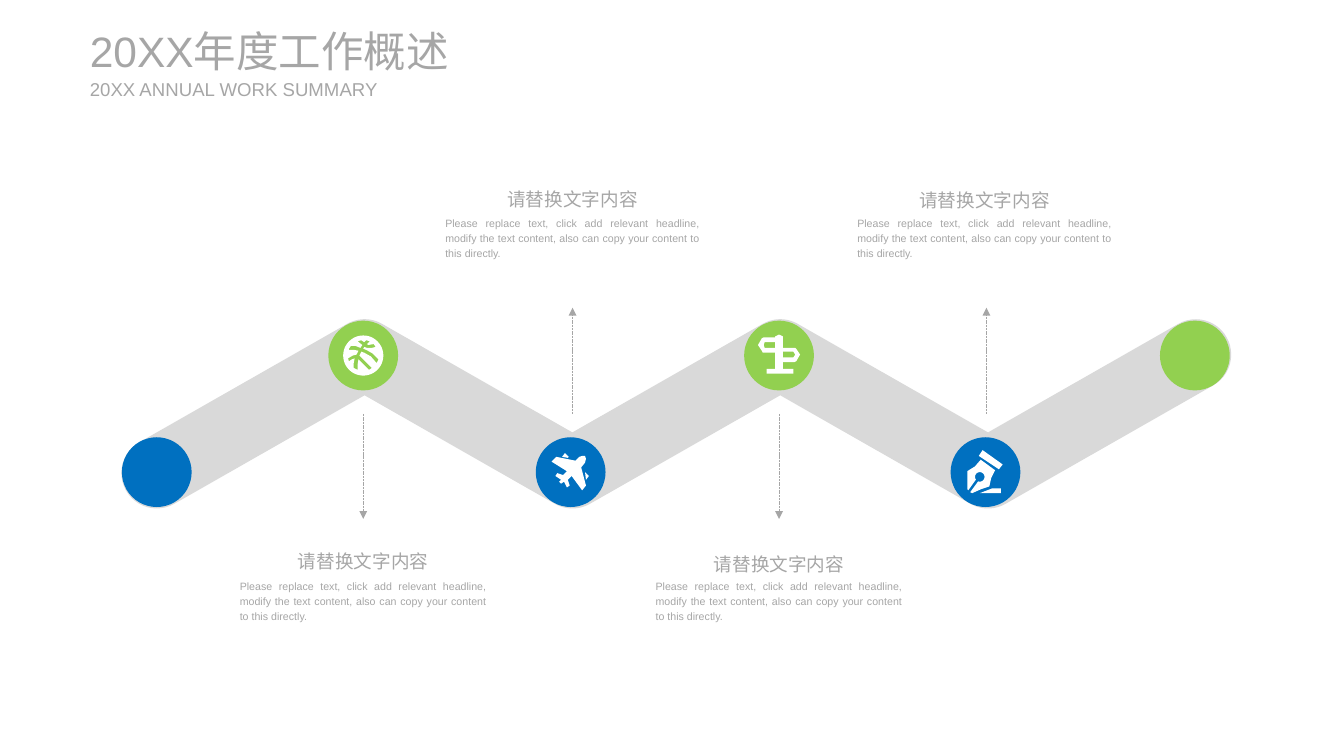
import math
from dataclasses import dataclass

from lxml import etree
from pptx import Presentation
from pptx import util as u
from pptx.dml.color import RGBColor
from pptx.enum import dml, shapes, text
from pptx.oxml.ns import qn


@dataclass(frozen=True)
class Theme:
    font: str = "Arial"
    grey: str = "A6A6A6"
    band: str = "D9D9D9"
    blue: str = "0070C0"
    green: str = "92D050"
    white: str = "FFFFFF"
    title: int = 32
    heading: int = 14
    body: int = 8


THEME = Theme()
TITLE = "20XX年度工作概述"
SUBTITLE = "20XX ANNUAL WORK SUMMARY"
HEADING = "请替换文字内容"
BODY = ("Please replace text, click add relevant headline, modify the text content, "
        "also can copy your content to this directly.")

CAPTIONS = [
    {"center": 3.8, "arrow": 3.8, "tip": 5.43, "heading": 5.66, "body": 5.99, "width": 2.78},
    {"center": 5.99, "arrow": 5.99, "tip": 3.22, "heading": 1.87, "body": 2.19, "width": 2.86},
    {"center": 8.15, "arrow": 8.15, "tip": 5.43, "heading": 5.69, "body": 5.99, "width": 2.78},
    {"center": 10.3, "arrow": 10.32, "tip": 3.22, "heading": 1.88, "body": 2.19, "width": 2.86},
]
ARROW_START = 4.33
HEADING_SIZE = (1.58, 0.36)
BODY_HEIGHT = 0.57

NODE_X = [1.64, 3.8, 5.97, 8.15, 10.31, 12.5]
NODE_Y = {"low": 4.94, "high": 3.72}
NODE_SIZE = 0.73
BAND_LEFT, BAND_RIGHT = 1.64, 12.51
BAND_LOW, BAND_HIGH = 4.95, 3.71
BAND_RADIUS = 0.37


def arc(x, y, radius, start, end, steps=24):
    angles = [math.radians(start + (end - start) * i / steps) for i in range(steps + 1)]
    return [(x + radius * math.cos(a), y + radius * math.sin(a)) for a in angles]


BALL = [
    arc(3.8, 3.72, 0.21, 0, 360, 48),
    [(3.67, 3.62), (3.65, 3.65), (3.65, 3.66), (3.7, 3.66), (3.75, 3.67), (3.73, 3.71),
     (3.69, 3.72), (3.64, 3.75), (3.65, 3.78), (3.68, 3.76), (3.71, 3.75), (3.7, 3.8),
     (3.7, 3.85), (3.74, 3.87), (3.74, 3.82), (3.75, 3.76), (3.8, 3.81), (3.86, 3.87),
     (3.89, 3.85), (3.83, 3.79), (3.76, 3.72), (3.78, 3.68), (3.81, 3.69), (3.88, 3.73),
     (3.94, 3.8), (3.96, 3.76), (3.9, 3.7), (3.83, 3.66), (3.8, 3.65), (3.81, 3.63),
     (3.84, 3.64), (3.89, 3.64), (3.93, 3.63), (3.91, 3.6), (3.85, 3.61), (3.84, 3.6),
     (3.87, 3.57), (3.83, 3.56), (3.81, 3.58), (3.78, 3.56), (3.74, 3.57), (3.79, 3.61),
     (3.77, 3.64), (3.72, 3.62)],
]
PLANE = [
    [(6.12, 4.77), (6.13, 4.8), (6.12, 4.84), (6.08, 4.89), (6.13, 5.08), (6.09, 5.13),
     (5.98, 4.98), (5.94, 5.02), (5.96, 5.08), (5.93, 5.1), (5.9, 5.04), (5.87, 5.06),
     (5.85, 5.04), (5.87, 5.02), (5.81, 4.98), (5.83, 4.95), (5.89, 4.97), (5.93, 4.93),
     (5.77, 4.83), (5.82, 4.78), (6.02, 4.82), (6.06, 4.78), (6.09, 4.77)],
    [(6.16, 4.98), (6.12, 4.94), (6.13, 5.02)],
    [(5.91, 4.74), (5.88, 4.78), (5.94, 4.79), (5.95, 4.78)],
]
SIGNPOST = [
    [(8.11, 3.58), (8, 3.58), (7.99, 3.61), (8, 3.64), (8.11, 3.64)],
    [(8.19, 3.64), (8.32, 3.64), (8.33, 3.65), (8.37, 3.71), (8.33, 3.78), (8.31, 3.79),
     (8.19, 3.79), (8.19, 3.86), (8.3, 3.86), (8.3, 3.91), (8.02, 3.91), (8.02, 3.86),
     (8.11, 3.86), (8.11, 3.69), (7.98, 3.69), (7.97, 3.67), (7.93, 3.61), (7.97, 3.54),
     (7.99, 3.53), (8.11, 3.53), (8.11, 3.52), (8.15, 3.5), (8.19, 3.52)],
    [(8.3, 3.68), (8.19, 3.68), (8.19, 3.74), (8.3, 3.74), (8.32, 3.71)],
]
PEN = [
    [(10.13, 5.13), (10.12, 5.12), (10.12, 4.93), (10.2, 4.88), (10.26, 4.81), (10.41, 4.92),
     (10.37, 5), (10.35, 5.09), (10.26, 5.12), (10.17, 5.16), (10.15, 5.15)]
    + arc(10.25, 4.99, 0.05, 110, -215),
    [(10.25, 5.16), (10.47, 5.16), (10.47, 5.11), (10.38, 5.11)],
    [(10.45, 4.91), (10.49, 4.86), (10.28, 4.71), (10.24, 4.77)],
]


def color(value):
    return RGBColor.from_string(value)


def paint(shape, value):
    shape.shadow.inherit = False
    shape.fill.solid()
    shape.fill.fore_color.rgb = color(value)
    shape.line.fill.background()


def draw_outline(page, contours, value):
    contours = [[(u.Inches(x), u.Inches(y)) for x, y in points] for points in contours]
    builder = page.shapes.build_freeform(*contours[0][0], scale=1.0)
    for number, points in enumerate(contours):
        if number:
            builder.move_to(*points[0])
        builder.add_line_segments(points[1:], close=True)
    paint(builder.convert_to_shape(), value)


def band_outline():
    count = len(NODE_X)
    pitch = (BAND_RIGHT - BAND_LEFT) / (count - 1)
    joints = [(BAND_LEFT + i * pitch, BAND_HIGH if i % 2 else BAND_LOW) for i in range(count)]
    tilt = math.atan2(BAND_LOW - BAND_HIGH, pitch)
    inner = BAND_RADIUS / math.cos(tilt)
    tilt = math.degrees(tilt)
    outline = arc(*joints[0], BAND_RADIUS, 90 - tilt, 270 - tilt)
    for i in range(1, count - 1):
        x, y = joints[i]
        outline += arc(x, y, BAND_RADIUS, 270 - tilt, 270 + tilt) if i % 2 else [(x, y - inner)]
    outline += arc(*joints[-1], BAND_RADIUS, 270 - tilt, 450 - tilt)
    for i in range(count - 2, 0, -1):
        x, y = joints[i]
        outline += [(x, y + inner)] if i % 2 else arc(x, y, BAND_RADIUS, 90 - tilt, 90 + tilt)
    return outline


def add_text(page, place, words, size, align, wrap=True, spacing=1.2, plain=False):
    box = page.shapes.add_textbox(*map(u.Inches, place))
    frame = box.text_frame
    frame.word_wrap = wrap
    frame.auto_size = text.MSO_AUTO_SIZE.SHAPE_TO_FIT_TEXT
    if plain:
        frame.margin_left = frame.margin_right = frame.margin_top = frame.margin_bottom = 0
        frame.vertical_anchor = text.MSO_ANCHOR.MIDDLE
    para = frame.paragraphs[0]
    para.alignment = align
    para.line_spacing = spacing
    span = para.add_run()
    span.text = words
    span.font.name = THEME.font
    span.font.size = u.Pt(size)
    span.font.color.rgb = color(THEME.grey)


def add_arrow(page, x, start, end):
    arrow = page.shapes.add_connector(
        shapes.MSO_CONNECTOR.STRAIGHT, *map(u.Inches, (x, start, x, end)))
    arrow.line.color.rgb = color(THEME.grey)
    arrow.line.width = u.Pt(0.5)
    arrow.line.dash_style = dml.MSO_LINE.SQUARE_DOT
    etree.SubElement(arrow.line._get_or_add_ln(), qn("a:tailEnd"), type="triangle")
    etree.SubElement(arrow._element.spPr, qn("a:effectLst"))


def add_caption(page, caption):
    width, height = HEADING_SIZE
    center, body_width = caption["center"], caption["width"]
    add_arrow(page, caption["arrow"], ARROW_START, caption["tip"])
    add_text(page, (center - width / 2, caption["heading"], width, height),
             HEADING, THEME.heading, text.PP_ALIGN.CENTER, wrap=False)
    add_text(page, (center - body_width / 2, caption["body"], body_width, BODY_HEIGHT),
             BODY, THEME.body, text.PP_ALIGN.JUSTIFY)


def main():
    deck = Presentation()
    deck.slide_width, deck.slide_height = u.Inches(14.06), u.Inches(7.91)
    page = deck.slides.add_slide(deck.slide_layouts[6])
    draw_outline(page, [band_outline()], THEME.band)
    for i, x in enumerate(NODE_X):
        y = NODE_Y["high" if i % 2 else "low"]
        node = page.shapes.add_shape(
            shapes.MSO_SHAPE.OVAL, u.Inches(x - NODE_SIZE / 2), u.Inches(y - NODE_SIZE / 2),
            u.Inches(NODE_SIZE), u.Inches(NODE_SIZE))
        paint(node, THEME.green if i % 2 else THEME.blue)
    for icon in (BALL, PLANE, SIGNPOST, PEN):
        draw_outline(page, icon, THEME.white)
    for caption in CAPTIONS:
        add_caption(page, caption)
    add_text(page, (0.94, 0.26, 4.32, 0.54), TITLE, THEME.title,
             text.PP_ALIGN.LEFT, spacing=1.0, plain=True)
    add_text(page, (0.94, 0.81, 3.07, 0.24), SUBTITLE, THEME.heading,
             text.PP_ALIGN.LEFT, spacing=1.0, plain=True)
    deck.save("out.pptx")


if __name__ == "__main__":
    main()
